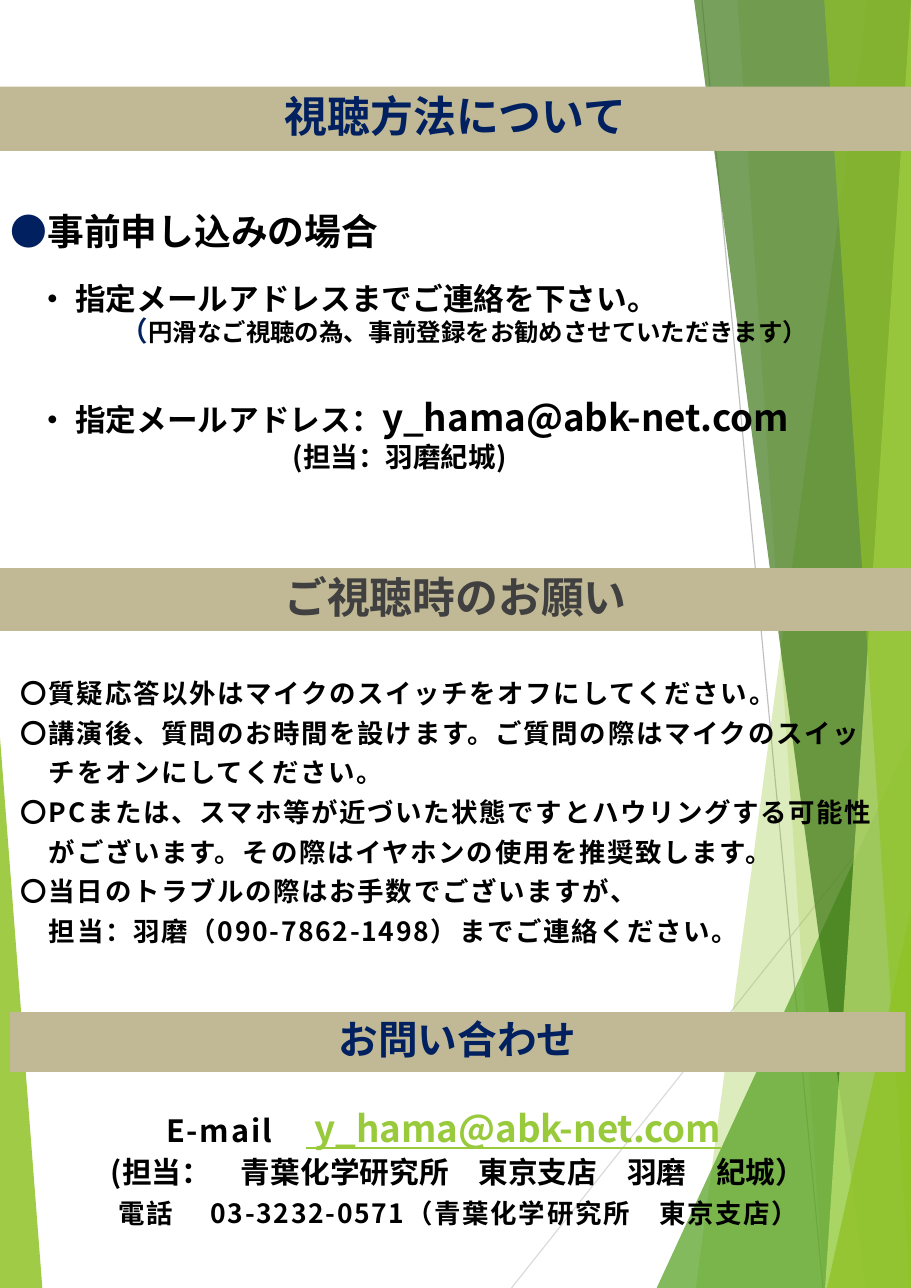
from lxml import etree
from pptx import Presentation
from pptx.dml.color import RGBColor
from pptx.enum.shapes import MSO_CONNECTOR, MSO_SHAPE
from pptx.enum.text import MSO_ANCHOR, PP_ALIGN
from pptx.oxml.ns import qn
from pptx.util import Cm, Pt

CENTER, LEFT = PP_ALIGN.CENTER, PP_ALIGN.LEFT
MIDDLE = MSO_ANCHOR.MIDDLE
RECTANGLE = MSO_SHAPE.RECTANGLE
STRAIGHT = MSO_CONNECTOR.STRAIGHT

WIDTH, HEIGHT = 21, 29.7
FONT = "Noto Sans CJK JP"
NAVY, BLACK, GRAY = "002060", "000000", "404040"
SAND, LIME, LINK = "C1B995", "90C226", "99CA3C"
MAIL = "y_hama@abk-net.com"
COMPANY = "青葉化学研究所"


def rgb(value):
    return RGBColor.from_string(value)


class Flyer:
    def __init__(self, slide):
        self.shapes = slide.shapes

    def style(self, font, size=None, color=None, tracking=None, underline=None):
        """Set only the given traits; tracking is in points."""
        if size is not None:
            font.size = Pt(size)
        if color is not None:
            font.color.rgb = rgb(color)
        if underline is not None:
            font.underline = underline
        if tracking is not None:
            font._element.set("spc", str(round(tracking * 100)))

    def paragraph(self, frame, runs, first, align=LEFT, line=0.9, before=0,
                  indent=0, **traits):
        """Add runs given as (text, overriding traits) pairs."""
        paragraph = frame.paragraphs[0] if first else frame.add_paragraph()
        paragraph.alignment = align
        paragraph.line_spacing = line
        paragraph.space_before = Pt(0 if first else before)
        if indent:
            paragraph._p.get_or_add_pPr().set("marL", str(Cm(indent)))
        font = paragraph.font
        font.name, font.bold = FONT, True
        self.style(font, **traits)
        etree.SubElement(font._element, qn("a:ea")).set("typeface", FONT)
        for text, overrides in runs:
            run = paragraph.add_run()
            run.text = text
            self.style(run.font, **overrides)

    def text(self, left, top, width, height, paragraphs):
        box = self.shapes.add_textbox(Cm(left), Cm(top), Cm(width), Cm(height))
        frame = box.text_frame
        frame.word_wrap = True
        for index, (runs, options) in enumerate(paragraphs):
            self.paragraph(frame, runs, index == 0, **options)

    def band(self, left, top, width, height, title, size, color):
        bar = self.shapes.add_shape(RECTANGLE, Cm(left), Cm(top), Cm(width), Cm(height))
        self.paint(bar, SAND)
        frame = bar.text_frame
        frame.vertical_anchor = MIDDLE
        self.paragraph(frame, [(title, {})], True, CENTER, size=size, color=color)

    def paint(self, shape, color):
        shape.shadow.inherit = False
        shape.fill.solid()
        shape.fill.fore_color.rgb = rgb(color)
        shape.line.fill.background()

    def panel(self, top, bottom, color, opacity, side=WIDTH):
        """Fill the area between a slanted edge and one side of the page."""
        corners = [top, bottom, (side, bottom[1]), (side, top[1])]
        corners = list(dict.fromkeys(corners))
        outline = self.shapes.build_freeform(*corners[0], scale=Cm(1))
        outline.add_line_segments(corners[1:], close=True)
        shape = outline.convert_to_shape()
        self.paint(shape, color)
        fill = shape._element.spPr.find(qn("a:solidFill"))
        etree.SubElement(fill[0], qn("a:alpha")).set("val", str(opacity * 1000))

    def hairline(self, start, end, color):
        line = self.shapes.add_connector(STRAIGHT, *map(Cm, start + end))
        line.line.color.rgb = rgb(color)
        line.line.width = Pt(0.75)
        etree.SubElement(line._element.spPr, qn("a:effectLst"))


def main():
    deck = Presentation()
    deck.slide_width, deck.slide_height = Cm(WIDTH), Cm(HEIGHT)
    flyer = Flyer(deck.slides.add_slide(deck.slide_layouts[6]))

    flyer.panel((0, 17.37), (1.04, HEIGHT), LIME, 85, side=0)
    flyer.hairline((11.79, HEIGHT), (WIDTH, 18.1), "D9D9D9")
    flyer.hairline((16.18, 0), (18.97, HEIGHT), "BFBFBF")
    for top, bottom_x, color, opacity in (
        ((20.47, 0), 15.82, LIME, 30),
        ((16.54, 0), 19.3, LIME, 20),
        ((WIDTH, 16.97), 15.24, "54A021", 72),
        ((16.1, 0), 20.37, "3F7819", 70),
        ((20.6, 0), 19.05, "C0E474", 70),
        ((18.54, 0), 20.7, LIME, 65),
        ((WIDTH, 21.18), 18.52, LIME, 80),
    ):
        flyer.panel(top, (bottom_x, HEIGHT), color, opacity)

    flyer.band(0, 2, WIDTH, 1.48, "視聴方法について", 28, NAVY)
    flyer.band(0, 13.1, WIDTH, 1.45, "ご視聴時のお願い", 28, GRAY)
    flyer.band(0.23, 23.34, 20.64, 1.38, "お問い合わせ", 25.9, NAVY)

    flyer.text(0, 4.8, 20.55, 9.02, [
        ([("●", {"color": NAVY}), ("事前申し込みの場合", {})],
         dict(size=24, color=BLACK)),
        ([("・ 指定メールアドレスまでご連絡を下さい。", {})],
         dict(size=20, color=BLACK, before=20.3, indent=0.62)),
        ([("（", {"size": 18, "color": NAVY}),
          ("円滑なご視聴の為、事前登録をお勧めさせていただきます）", {})],
         dict(size=16, color=BLACK, indent=2.54)),
        ([("・ 指定メールアドレス：", {}), (MAIL, {"size": 24})],
         dict(size=20, color=BLACK, before=34.6, indent=0.62)),
        ([("(担当：羽磨紀城)", {})],
         dict(size=18, color=BLACK, before=2.6, indent=6.5)),
    ])

    exact = dict(line=Pt(19.4), before=6.5, color=BLACK)
    requests = (
        ("〇質疑応答以外はマイクのスイッチをオフにしてください。", 0),
        ("〇講演後、質問のお時間を設けます。ご質問の際はマイクのスイッ", 0),
        ("チをオンにしてください。", 0.65),
        ("〇PCまたは、スマホ等が近づいた状態ですとハウリングする可能性", 0),
        ("がございます。その際はイヤホンの使用を推奨致します。", 0.65),
        ("〇当日のトラブルの際はお手数でございますが、", 0),
        ("担当：羽磨（090-7862-1498）までご連絡ください。", 0.65),
    )
    flyer.text(0.23, 15.54, 20.55, 6.27, [
        ([(request, {})], dict(exact, size=17.3, tracking=1.1, indent=indent))
        for request, indent in requests
    ])

    centered = dict(exact, align=CENTER)
    flyer.text(0.3, 25.7, 20.55, 2.72, [
        ([("E-mail　", {"size": 20, "tracking": 1.1}),
          (" " + MAIL, {"size": 24, "color": LINK, "underline": True}),
          ("　", {})], dict(centered, size=19.4)),
        ([(f"(担当：　{COMPANY}　東京支店　羽磨　紀城）", {})],
         dict(centered, size=19.4)),
        ([(f"電話　 03-3232-0571（{COMPANY}　東京支店）", {})],
         dict(centered, size=17.3, tracking=1.1)),
    ])

    deck.save("out.pptx")


if __name__ == "__main__":
    main()
